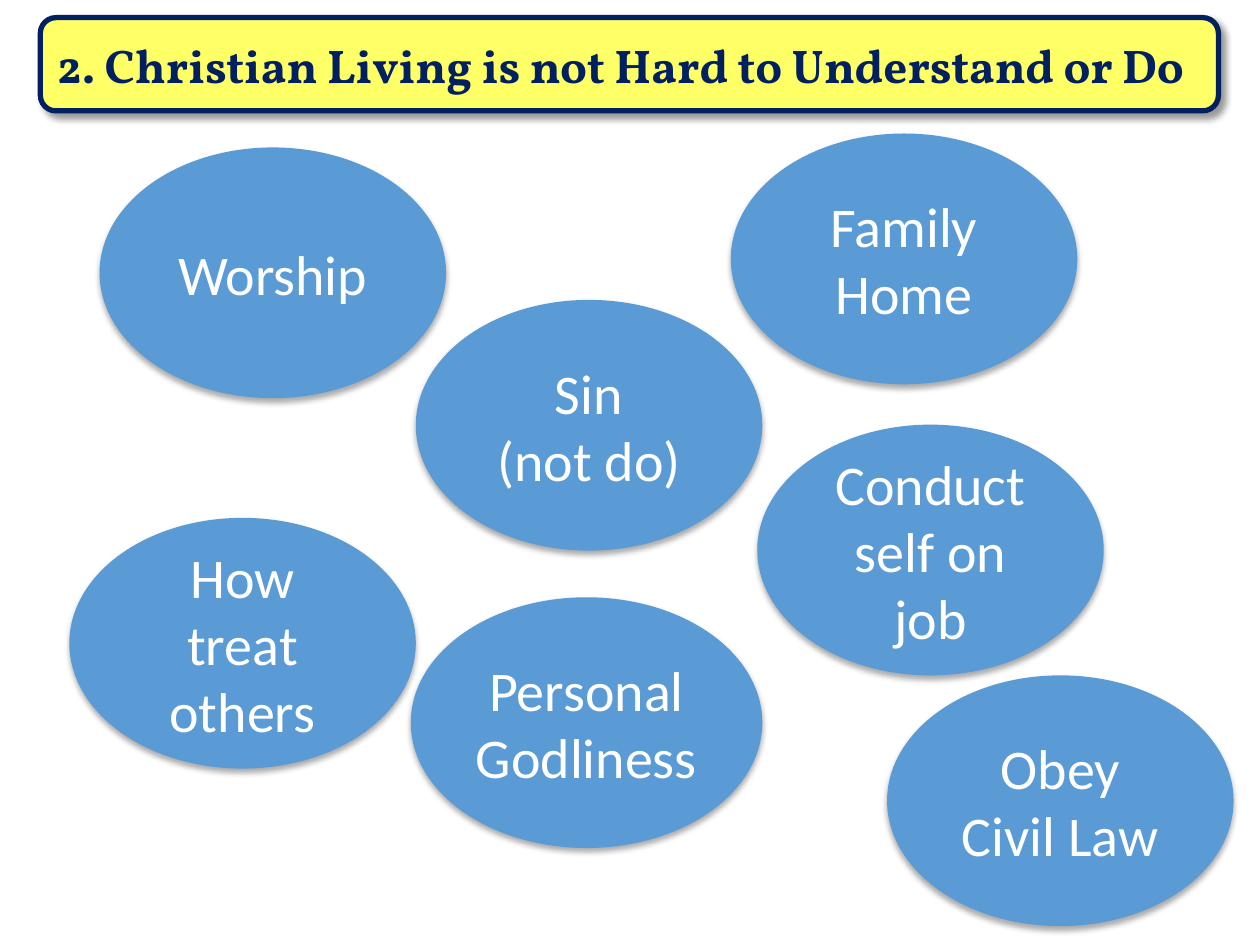
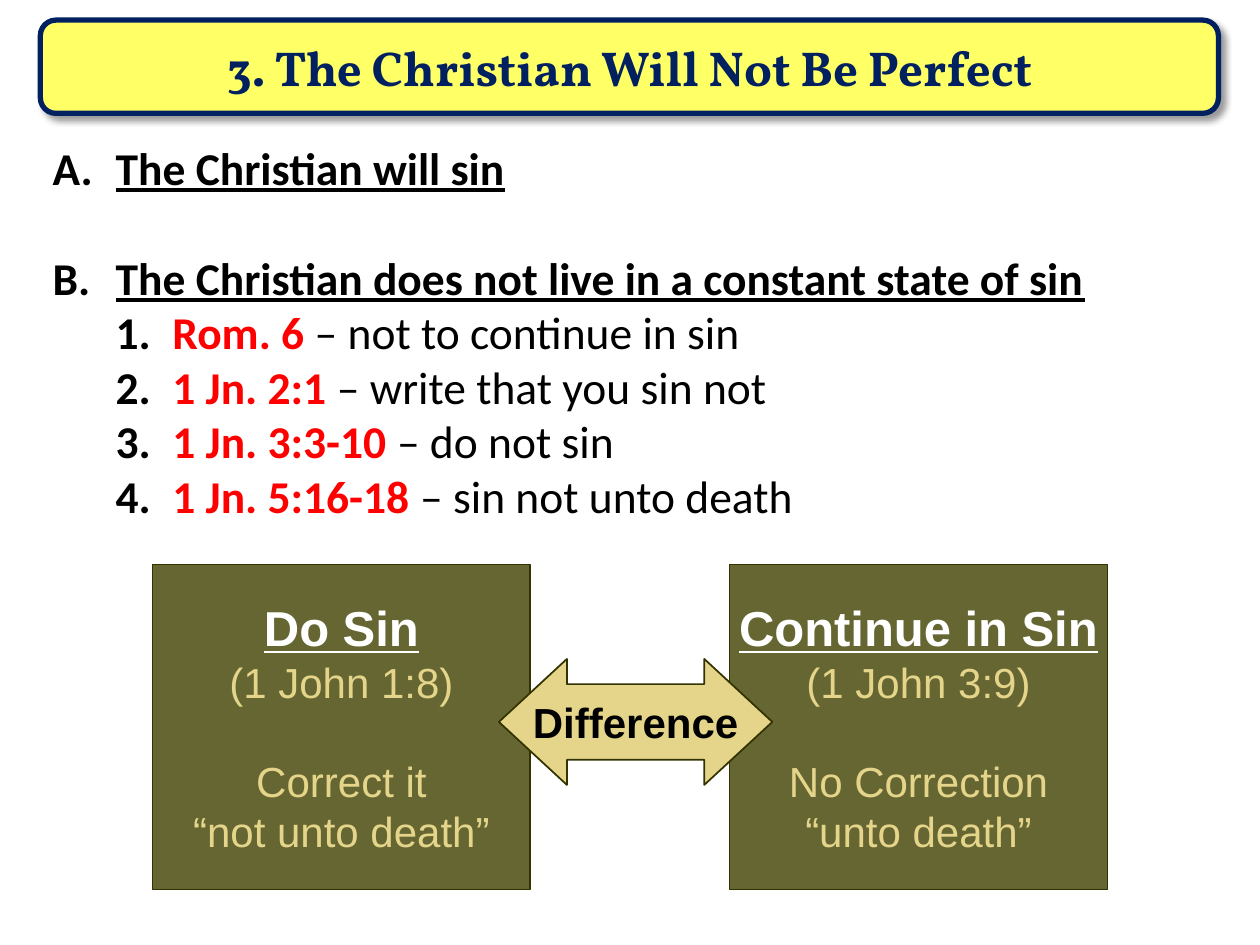
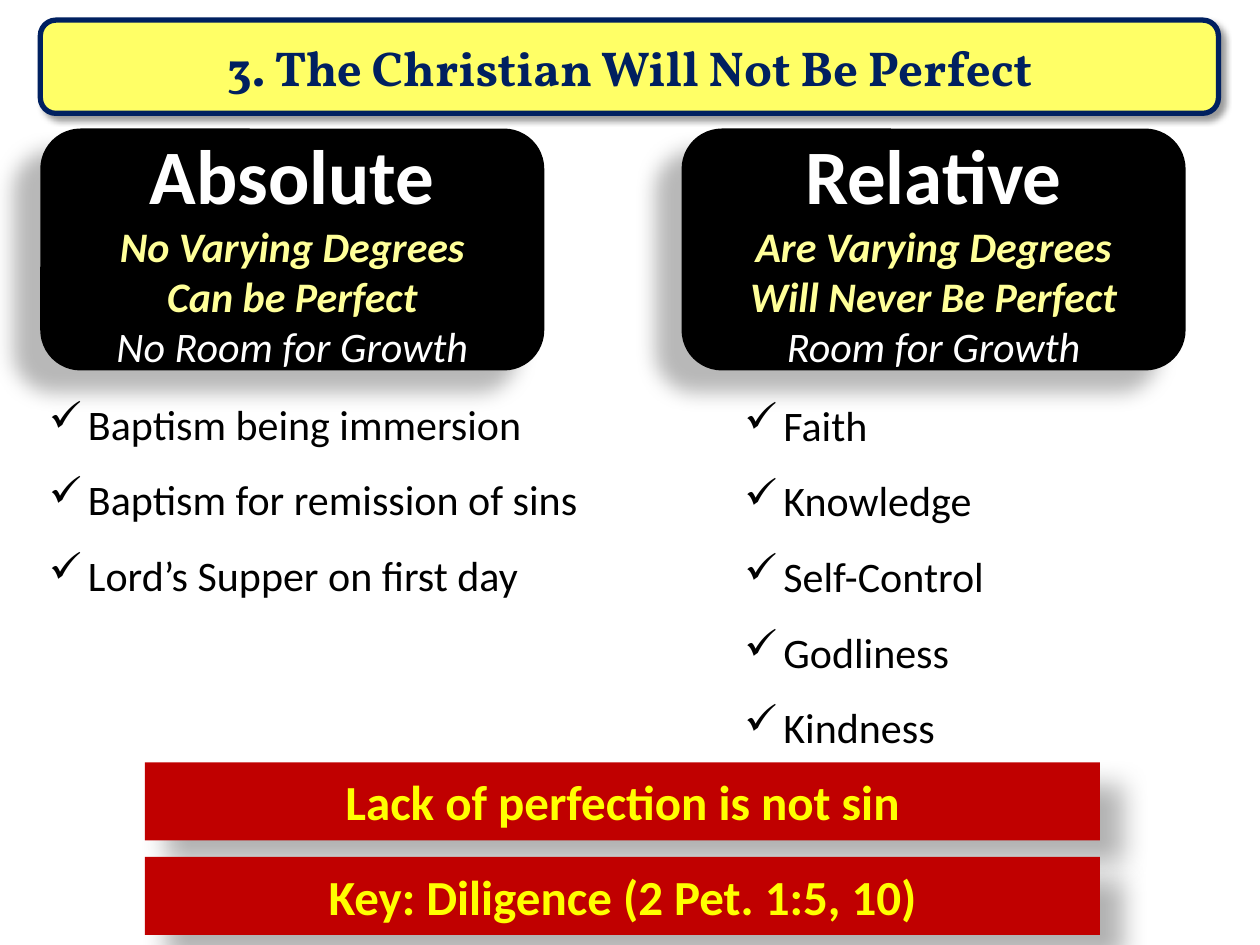
"""Builds three slides on Christian living, sin and perfection."""
from pptx import Presentation
from pptx.dml.color import RGBColor
from pptx.enum.shapes import MSO_SHAPE as Shape
from pptx.enum.text import MSO_ANCHOR as Anchor, PP_ALIGN as Align
from pptx.oxml import parse_xml
from pptx.oxml.ns import nsdecls, qn
from pptx.util import Inches, Pt

WHITE = RGBColor(0xFF, 0xFF, 0xFF)
BLACK = RGBColor(0x00, 0x00, 0x00)
NAVY = RGBColor(0x00, 0x20, 0x60)
LEMON = RGBColor(0xFF, 0xFF, 0x66)
PALE_YELLOW = RGBColor(0xFF, 0xFF, 0x99)
YELLOW = RGBColor(0xFF, 0xFF, 0x00)
BLUE = RGBColor(0x5B, 0x9B, 0xD5)
RED = RGBColor(0xFF, 0x00, 0x00)
DARK_RED = RGBColor(0xC0, 0x00, 0x00)
OLIVE = RGBColor(0x66, 0x66, 0x33)
DARK_OLIVE = RGBColor(0x33, 0x33, 0x00)
SAND = RGBColor(0xE5, 0xD5, 0x8A)

TITLE_SHADOW = (40, 4, 3, 45)
TOPIC_SHADOW = (32, 3.5, 2.2, 90)
HEADING_SHADOW = (28, 11.8, 19.7, 141)
BANNER_SHADOW = (30, 15, 18, 45)


def write(frame, lines, font="Calibri", align=Align.CENTER, bullets=None):
    """Writes lines of (text, size, colour, style) runs; bullets are (left, hanging, tag)."""
    for number, line in enumerate(lines):
        paragraph = frame.paragraphs[0] if number == 0 else frame.add_paragraph()
        paragraph.alignment = align
        if bullets:
            left, hanging, mark = bullets[number]
            properties = paragraph._p.get_or_add_pPr()
            properties.set("marL", str(Inches(left)))
            properties.set("indent", str(-Inches(hanging)))
            properties.append(parse_xml(
                f'<a:buClr {nsdecls("a")}><a:srgbClr val="{BLACK}"/></a:buClr>'))
            properties.append(parse_xml(f'<a:{mark} {nsdecls("a")}/>'))
        for text, size, colour, style in line:
            run = paragraph.add_run()
            run.text = text
            run.font.name = font
            run.font.size = Pt(size)
            run.font.color.rgb = colour
            run.font.bold = "b" in style
            run.font.italic = "i" in style
            run.font.underline = "u" in style


def add_block(slide, kind, box, fill, outline=None, shadow=None):
    """Adds a filled shape; outline is (colour, points), shadow (opacity, blur, distance, angle)."""
    block = slide.shapes.add_shape(kind, *map(Inches, box))
    block.fill.solid()
    block.fill.fore_color.rgb = fill
    if outline:
        block.line.color.rgb = outline[0]
        block.line.width = Pt(outline[1])
    else:
        block.line.fill.background()
    block.shadow.inherit = False
    if shadow:
        opacity, blur, distance, angle = shadow
        block._element.spPr.find(qn("a:effectLst")).append(parse_xml(
            f'<a:outerShdw {nsdecls("a")} blurRad="{Pt(blur)}" dist="{Pt(distance)}" '
            f'dir="{angle * 60000}" algn="ctr" rotWithShape="0"><a:srgbClr val="{BLACK}">'
            f'<a:alpha val="{opacity * 1000}"/></a:srgbClr></a:outerShdw>'))
    block.text_frame.word_wrap = True
    block.text_frame.vertical_anchor = Anchor.MIDDLE
    return block


deck = Presentation()
deck.slide_width, deck.slide_height = Inches(10), Inches(7.5)
living, sinning, growing = [deck.slides.add_slide(deck.slide_layouts[6]) for _ in range(3)]

topics = [
    (0.79, 1.17, 2.75, ["Worship"]),
    (3.3, 2.38, 2.75, ["Sin", "(not do)"]),
    (5.8, 1.06, 2.75, ["Family", "Home"]),
    (0.55, 4.11, 2.75, ["How treat others"]),
    (7.04, 5.36, 2.75, ["Obey Civil Law"]),
    (6.01, 3.37, 2.75, ["Conduct self on job"]),
    (3.26, 4.74, 2.79, ["Personal", "Godliness"]),
]
for left, top, width, words in topics:
    topic = add_block(living, Shape.OVAL, (left, top, width, 1.99), BLUE, shadow=TOPIC_SHADOW)
    write(topic.text_frame, [[(word, 32, WHITE, "")] for word in words])

points = ["The Christian will sin", "The Christian does not live in a constant state of sin"]
verses = [
    ("Rom. 6 ", "– not to continue in sin"),
    ("1 Jn. 2:1 ", "– write that you sin not"),
    ("1 Jn. 3:3-10 ", "– do not sin"),
    ("1 Jn. 5:16-18 ", "– sin not unto death"),
]
outline = sinning.shapes.add_textbox(*map(Inches, (0.32, 1.06, 9.35, 3.16))).text_frame
outline.word_wrap = True
write(outline,
      [[(point, 26, BLACK, "bu")] for point in points]
      + [[(verse, 26, RED, "b"), (lesson, 26, BLACK, "")] for verse, lesson in verses],
      align=Align.LEFT,
      bullets=[(0.5, 0.5, 'buAutoNum type="alphaUcPeriod"')] * len(points)
      + [(0.95, 0.45, 'buAutoNum type="arabicPeriod"')] * len(verses))
outline.paragraphs[1].space_before = Pt(31.7)
for verse_line in outline.paragraphs[len(points):]:
    verse_line.level = 1

contrasts = [
    (1.21, "Do Sin", ["(1 John 1:8)", "Correct it", "“not unto death”"]),
    (5.79, "Continue in Sin", ["(1 John 3:9)", "No Correction", "“unto death”"]),
]
for left, heading, details in contrasts:
    contrast = add_block(sinning, Shape.RECTANGLE, (left, 4.48, 3, 2.58), OLIVE,
                         (DARK_OLIVE, 1)).text_frame
    contrast.word_wrap = False
    write(contrast, [[(heading, 28, WHITE, "bu")]]
          + [[(detail, 24, SAND, "")] for detail in details], "Arial")
    contrast.paragraphs[2].space_before = Pt(27.6)

difference = add_block(sinning, Shape.LEFT_RIGHT_ARROW, (3.96, 5.23, 2.17, 1), SAND,
                       (DARK_OLIVE, 1))
difference.adjustments[0], difference.adjustments[1] = 0.6, 0.54
difference.text_frame.word_wrap = False
write(difference.text_frame, [[("Difference", 24, BLACK, "b")]], "Arial")

standards = [
    (0.32, "Absolute", ["No Varying Degrees", "Can be Perfect"], "No Room for Growth",
     (0.29, 2.91, 5, 1.92),
     ["Baptism being immersion", "Baptism for remission of sins", "Lord’s Supper on first day"]),
    (5.41, "Relative", ["Are Varying Degrees", "Will Never Be Perfect"], "Room for Growth",
     (5.81, 2.92, 3.17, 3.13),
     ["Faith", "Knowledge", "Self-Control", "Godliness", "Kindness"]),
]
for left, heading, traits, growth, list_box, examples in standards:
    standard = add_block(growing, Shape.ROUNDED_RECTANGLE, (left, 1.02, 4, 1.92), BLACK,
                         shadow=HEADING_SHADOW)
    write(standard.text_frame, [[(heading, 44, WHITE, "b")]]
          + [[(trait, 24, PALE_YELLOW, "bi")] for trait in traits]
          + [[(growth, 24, WHITE, "i")]])
    checklist = growing.shapes.add_textbox(*map(Inches, list_box)).text_frame
    checklist.word_wrap = True
    write(checklist, [[(example, 24, BLACK, "")] for example in examples], align=Align.LEFT,
          bullets=[(0.31, 0.31, 'buChar char="✓"')] * len(examples))
    for example_line in checklist.paragraphs:
        example_line.line_spacing = 1.5

conclusions = ["Lack of perfection is not sin", "Key: Diligence (2 Pet. 1:5, 10)"]
for row, conclusion in enumerate(conclusions):
    banner = add_block(growing, Shape.RECTANGLE, (1.15, 6.05 + 0.75 * row, 7.58, 0.62), DARK_RED,
                       shadow=BANNER_SHADOW)
    write(banner.text_frame, [[(conclusion, 28, YELLOW, "b")]])

perfect = "3. The Christian Will Not Be Perfect"
titles = [
    (living, 0.14, "2. Christian Living is not Hard to Understand or Do", 27, Align.LEFT),
    (sinning, 0.16, perfect, 28, Align.CENTER),
    (growing, 0.16, perfect, 28, Align.CENTER),
]
for slide, top, title, size, align in titles:
    title_band = add_block(slide, Shape.ROUNDED_RECTANGLE, (0.32, top, 9.35, 0.74), LEMON,
                           (NAVY, 3), TITLE_SHADOW)
    write(title_band.text_frame, [[(title, size, NAVY, "b")]], "Vollkorn", align)

deck.save("out.pptx")
